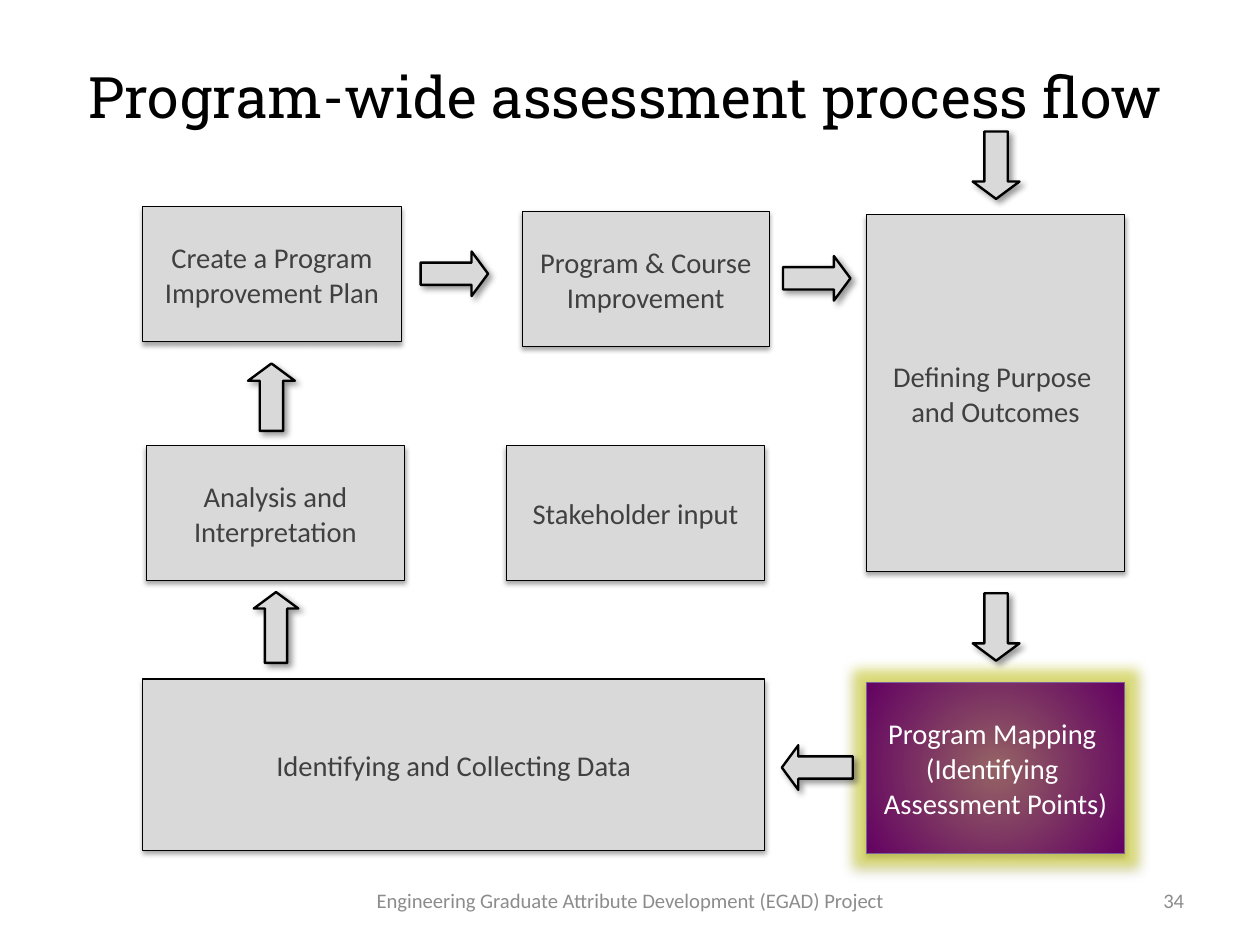
from lxml.etree import SubElement
from pptx import Presentation
from pptx.dml.color import RGBColor
from pptx.enum.shapes import MSO_SHAPE
from pptx.enum.text import MSO_ANCHOR, MSO_AUTO_SIZE, PP_ALIGN
from pptx.oxml import parse_xml
from pptx.oxml.ns import nsdecls, qn
from pptx.util import Inches, Pt

BLACK = RGBColor(0x00, 0x00, 0x00)
WHITE = RGBColor(0xFF, 0xFF, 0xFF)
GREY = RGBColor(0xD9, 0xD9, 0xD9)
CHARCOAL = RGBColor(0x40, 0x40, 0x40)
FOOTER_GREY = RGBColor(0x8C, 0x8C, 0x8C)
PURPLE = RGBColor(0x64, 0x00, 0x64)
VIOLET = RGBColor(0x7D, 0x60, 0xA0)
YELLOW = RGBColor(0xD9, 0xD9, 0x00)

CM_PER_INCH = 2.54
SLIDE_CM = (28, 21)
TITLE = "Program-wide assessment process flow"
FOOTERS = [
    ("Engineering Graduate Attribute Development (EGAD) Project", 3.07, 4.88, PP_ALIGN.CENTER),
    ("34", 7.9, 2.57, PP_ALIGN.RIGHT),
]
STEPS = [
    ("Defining Purpose \nand Outcomes", 7.58, 1.88, 2.26, 3.12),
    ("Stakeholder input", 4.43, 3.9, 2.26, 1.18),
    ("Identifying and Collecting Data", 1.25, 5.94, 5.44, 1.5),
    ("Analysis and\nInterpretation", 1.28, 3.9, 2.26, 1.18),
    ("Create a Program\nImprovement Plan", 1.25, 1.81, 2.26, 1.18),
    ("Program & Course\nImprovement", 4.57, 1.85, 2.16, 1.18),
]
CURRENT_STEP = ("Program Mapping \n(Identifying \nAssessment Points)", 7.58, 5.97, 2.26, 1.5)
ARROWS = [
    (MSO_SHAPE.DOWN_ARROW, 8.51, 5.19, 0.41, 0.59),
    (MSO_SHAPE.LEFT_ARROW, 6.84, 6.52, 0.62, 0.39),
    (MSO_SHAPE.UP_ARROW, 2.22, 5.18, 0.39, 0.62),
    (MSO_SHAPE.UP_ARROW, 2.17, 3.18, 0.41, 0.59),
    (MSO_SHAPE.DOWN_ARROW, 8.51, 1.15, 0.41, 0.59),
    (MSO_SHAPE.RIGHT_ARROW, 3.68, 2.2, 0.59, 0.39),
    (MSO_SHAPE.RIGHT_ARROW, 6.85, 2.24, 0.59, 0.39),
]


def place(part, left, top, width, height):
    """Move and size a part, in inches."""
    part.left, part.top = Inches(left), Inches(top)
    part.width, part.height = Inches(width), Inches(height)


def write(part, text, size, font, color, align, margins, spacing=None, wrap=True):
    """Fill a part with vertically centred text in one style."""
    frame = part.text_frame
    frame.text = text
    frame.word_wrap = wrap
    frame.auto_size = MSO_AUTO_SIZE.NONE
    frame.vertical_anchor = MSO_ANCHOR.MIDDLE
    frame.margin_left = frame.margin_right = Inches(margins[0])
    frame.margin_top = frame.margin_bottom = Inches(margins[1])
    for paragraph in frame.paragraphs:
        paragraph.alignment = align
        paragraph.line_spacing = spacing
        for run in paragraph.runs:
            run.font.size = Pt(size)
            run.font.name = font
            run.font.color.rgb = color


def add_color(parent, color, alpha):
    """Add a colour with an opacity in percent."""
    tint = SubElement(parent, qn("a:srgbClr"), val=str(color))
    SubElement(tint, qn("a:alpha"), val=str(alpha * 1000))


def add_block(slide, preset, box, line_color, line_width, shadow):
    """Add a grey outlined shape with a soft shadow."""
    block = slide.shapes.add_shape(preset, *map(Inches, box))
    block.fill.solid()
    block.fill.fore_color.rgb = GREY
    block.line.color.rgb = line_color
    block.line.width = Pt(line_width)
    block.shadow.inherit = False
    alpha, blur, distance, angle = shadow
    effects = block._element.spPr.find(qn("a:effectLst"))
    outer = SubElement(effects, qn("a:outerShdw"), blurRad=str(Pt(blur)),
                       dist=str(Pt(distance)), dir=str(angle * 60000), rotWithShape="0")
    add_color(outer, BLACK, alpha)
    return block


def add_step(slide, step, line_color=BLACK, text_color=CHARCOAL):
    """Add a process box with its label."""
    text, *box = step
    block = add_block(slide, MSO_SHAPE.FLOWCHART_PROCESS, box, line_color, 0.75, (35, 3.1, 1.8, 90))
    write(block, text, 18, "Calibri", text_color, PP_ALIGN.CENTER, (0.1, 0.05), 1.02, False)
    return block


def highlight(block):
    """Give a box a radial purple fill and a yellow glow."""
    properties = block._element.spPr
    gradient = parse_xml(
        f'<a:gradFill {nsdecls("a")} rotWithShape="1"><a:gsLst><a:gs pos="0"/><a:gs pos="100000"/></a:gsLst>'
        '<a:path path="circle"><a:fillToRect l="50000" t="50000" r="50000" b="50000"/></a:path></a:gradFill>')
    for stop, alpha in zip(gradient[0], (50, 100)):
        add_color(stop, PURPLE, alpha)
    properties.replace(properties.find(qn("a:solidFill")), gradient)
    effects = properties.find(qn("a:effectLst"))
    glow = SubElement(effects, qn("a:glow"), rad=str(Inches(0.22)))
    add_color(glow, YELLOW, 45)
    effects.insert(0, glow)


def main():
    """Build the process flow slide."""
    presentation = Presentation()
    width, height = (Inches(side / CM_PER_INCH) for side in SLIDE_CM)
    presentation.slide_width, presentation.slide_height = width, height
    presentation.element.sldSz.attrib.pop("type", None)
    slide = presentation.slides.add_slide(presentation.slide_layouts[5])
    title = slide.shapes.title
    place(title, 0.51, 0.53, 9.92, 0.61)
    write(title, TITLE, 36, "Roboto Slab", BLACK, PP_ALIGN.CENTER, (0.11, 0.06))
    for text, left, footer_width, align in FOOTERS:
        footer = slide.shapes.add_textbox(*map(Inches, (left, 7.66, footer_width, 0.44)))
        write(footer, text, 13, "Calibri", FOOTER_GREY, align, (0.11, 0.06))
    for step in STEPS:
        add_step(slide, step)
    highlight(add_step(slide, CURRENT_STEP, VIOLET, WHITE))
    for preset, *box in ARROWS:
        arrow = add_block(slide, preset, box, BLACK, 1.5, (40, 4, 3, 45))
        arrow.adjustments[0], arrow.adjustments[1] = 0.5, 0.37
    presentation.save("out.pptx")


if __name__ == "__main__":
    main()
